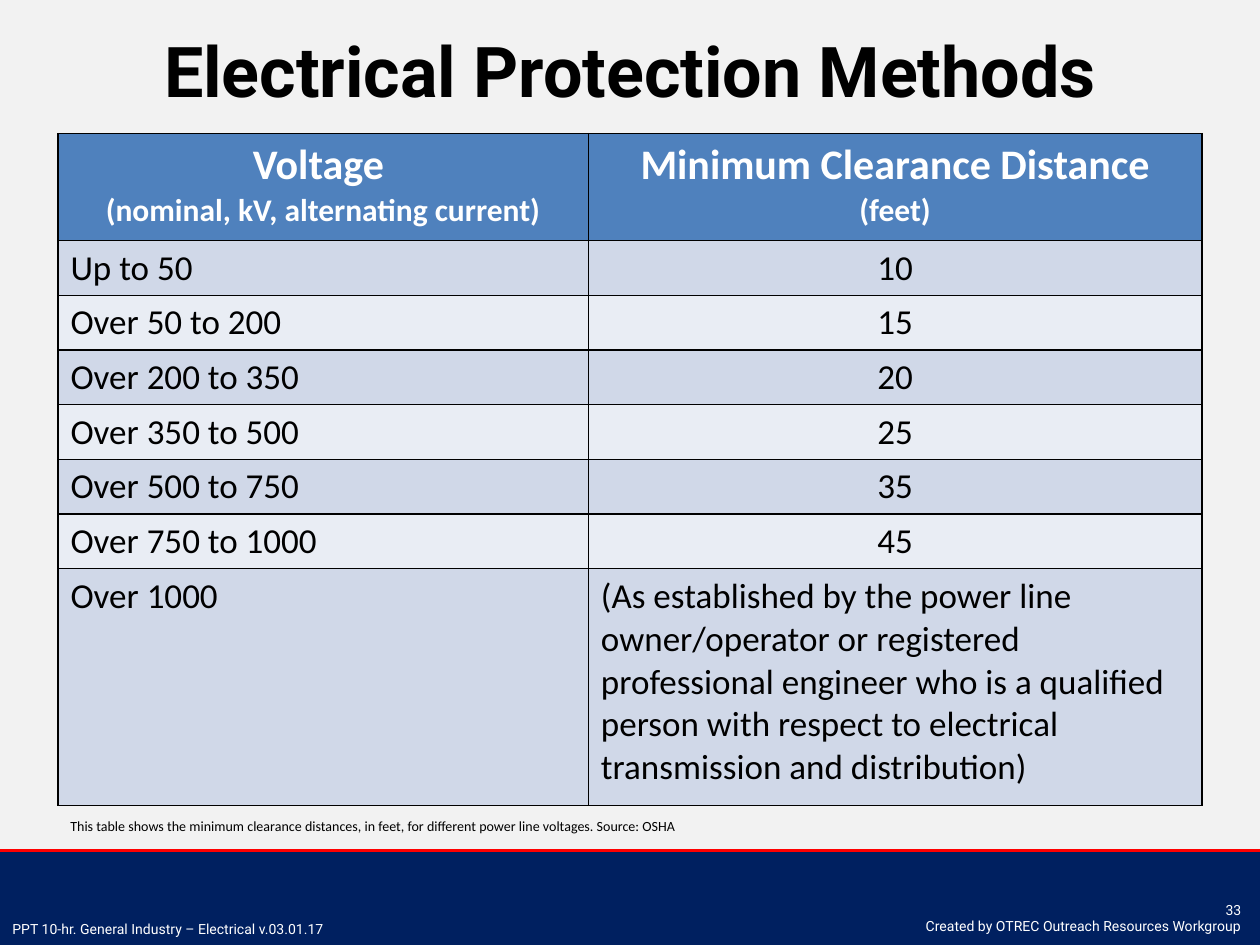
from lxml.etree import SubElement
from pptx import Presentation
from pptx.dml.color import RGBColor
from pptx.enum.shapes import MSO_CONNECTOR as Connector, MSO_SHAPE as Shape
from pptx.enum.text import MSO_ANCHOR as Anchor, PP_ALIGN as Align
from pptx.oxml.ns import qn
from pptx.util import Inches, Pt

COLORS = {
    "background": "F2F2F2",
    "navy": "002060",
    "red": "FF0000",
    "header": "4F81BD",
    "odd": "D0D8E8",
    "even": "E9EDF4",
    "black": "000000",
    "white": "FFFFFF",
}

CLEARANCES = [
    ("Up to 50", "10"),
    ("Over 50 to 200", "15"),
    ("Over 200 to 350", "20"),
    ("Over 350 to 500", "25"),
    ("Over 500 to 750", "35"),
    ("Over 750 to 1000", "45"),
    ("Over 1000", "(As established by the power line owner/operator or registered "
                  "professional engineer who is a qualified person with respect to "
                  "electrical transmission and distribution)"),
]
HEADERS = [
    [[("Voltage ", 24)], [("(nominal, kV, alternating current)", 18)]],
    [[("Minimum Clearance Distance ", 24), ("(feet)", 18)]],
]
COLUMN_WIDTHS = [4.21, 4.87]
ROW_HEIGHTS = [0.85] + [0.43] * 6 + [1.88]


def color(name):
    return RGBColor.from_string(COLORS[name])


def paint(target, name):
    target.fill.solid()
    target.fill.fore_color.rgb = color(name)


def write(frame, paragraphs, font, ink, bold=False, align=Align.LEFT):
    for index, spans in enumerate(paragraphs):
        para = frame.paragraphs[0] if index == 0 else frame.add_paragraph()
        para.alignment = align
        for text, size in spans:
            span = para.add_run()
            span.text = text
            span.font.name = font
            span.font.size = Pt(size)
            span.font.bold = bold
            span.font.color.rgb = color(ink)


def add_text(page, bounds, lines, font, ink, align=Align.LEFT, anchor=Anchor.TOP):
    box = page.shapes.add_textbox(*map(Inches, bounds))
    frame = box.text_frame
    frame.word_wrap = True
    frame.vertical_anchor = anchor
    write(frame, [[(line, 8)] for line in lines], font, ink, align=align)


def add_footer_band(page):
    band = page.shapes.add_shape(Shape.RECTANGLE, *map(Inches, (0, 6.75, 10, 0.75)))
    band.shadow.inherit = False
    paint(band, "navy")
    band.line.fill.background()
    rule = page.shapes.add_connector(
        Connector.STRAIGHT, *map(Inches, (0, 6.75, 10, 6.75)))
    rule.line.color.rgb = color("red")
    rule.line.width = Pt(2)
    SubElement(rule._element.spPr, qn("a:effectLst"))


def set_title(page, text):
    title = page.shapes.title
    title.left, title.top, title.width, title.height = map(Inches, (0.5, 0.17, 9, 1.25))
    title.text_frame.vertical_anchor = Anchor.TOP
    write(title.text_frame, [[(text, 40)]], "Roboto", "black", True, Align.CENTER)


def add_borders(cell):
    properties = cell._tc.get_or_add_tcPr()
    for side in ("lnL", "lnR", "lnT", "lnB"):
        line = SubElement(properties, qn(f"a:{side}"), w=str(Pt(1)))
        fill = SubElement(line, qn("a:solidFill"))
        SubElement(fill, qn("a:srgbClr"), val=COLORS["black"])


def format_cell(cell, paragraphs, fill, ink, bold, align):
    add_borders(cell)
    paint(cell, fill)
    write(cell.text_frame, paragraphs, "Calibri", ink, bold, align)


def add_clearance_table(page):
    bounds = (0.46, 1.06, sum(COLUMN_WIDTHS), sum(ROW_HEIGHTS))
    table = page.shapes.add_table(
        len(ROW_HEIGHTS), len(COLUMN_WIDTHS), *map(Inches, bounds)).table
    for column, width in zip(table.columns, COLUMN_WIDTHS):
        column.width = Inches(width)
    for row, height in zip(table.rows, ROW_HEIGHTS):
        row.height = Inches(height)
    for index, paragraphs in enumerate(HEADERS):
        format_cell(table.cell(0, index), paragraphs, "header", "white", True, Align.CENTER)
    for number, values in enumerate(CLEARANCES, 1):
        fill = "odd" if number % 2 else "even"
        for index, text in enumerate(values):
            align = Align.CENTER if text.isdigit() else Align.LEFT
            format_cell(table.cell(number, index), [[(text, 20)]],
                        fill, "black", False, align)


def main():
    deck = Presentation()
    deck.slide_width, deck.slide_height = Inches(10), Inches(7.5)
    page = deck.slides.add_slide(deck.slide_layouts[5])
    paint(page.background, "background")
    add_footer_band(page)
    add_text(page, (0, 7.26, 3.17, 0.24),
             ["PPT 10-hr. General Industry – Electrical v.03.01.17"], "Roboto", "white")
    add_text(page, (6.87, 7.05, 3.08, 0.47),
             ["33", "Created by OTREC Outreach Resources Workgroup"],
             "Roboto", "white", Align.RIGHT, Anchor.MIDDLE)
    add_clearance_table(page)
    set_title(page, "Electrical Protection Methods")
    add_text(page, (0.46, 6.44, 9.02, 0.24),
             ["This table shows the minimum clearance distances, in feet, "
              "for different power line voltages. Source: OSHA"], "Calibri", "black")
    deck.save("out.pptx")


if __name__ == "__main__":
    main()
